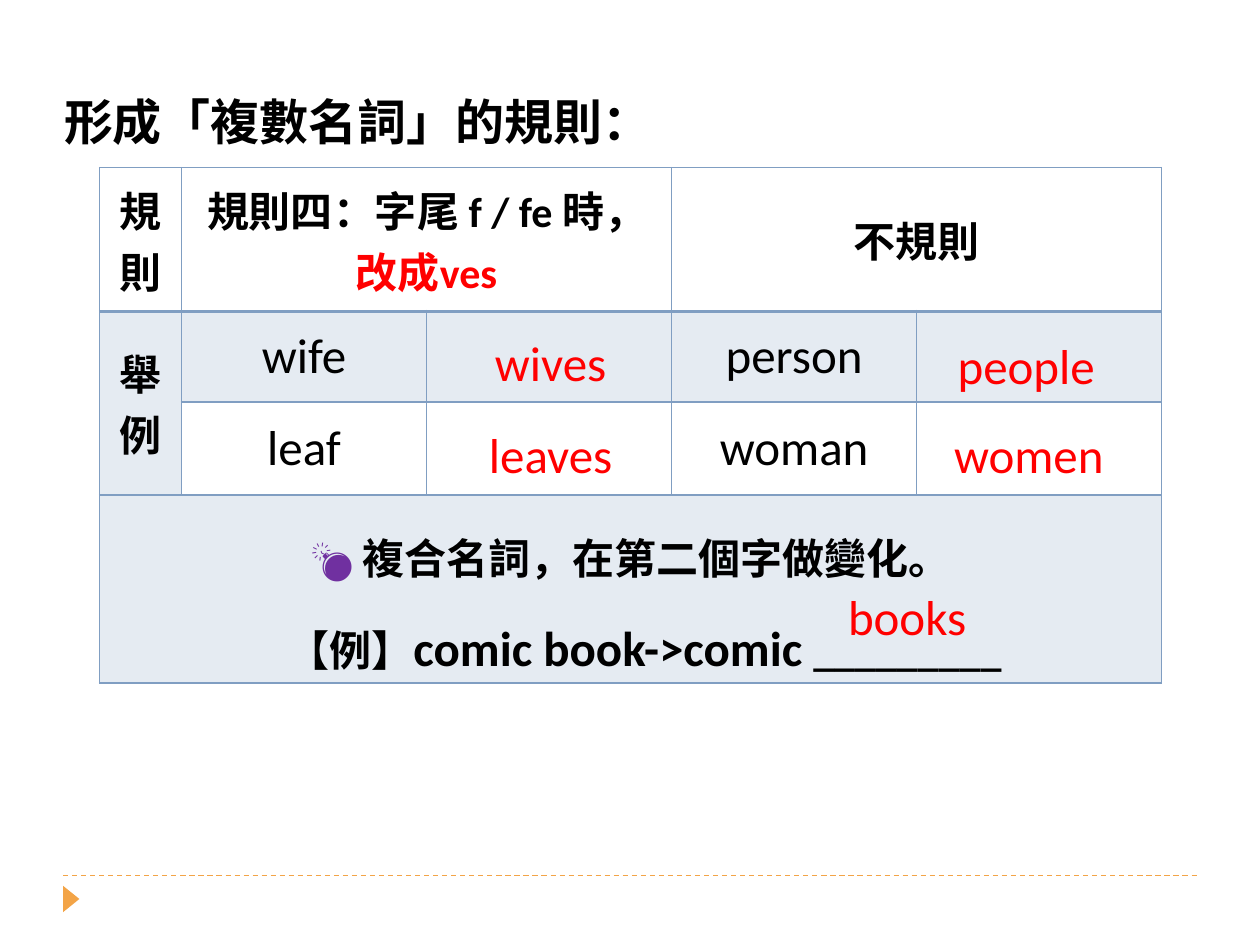
from lxml import etree
from pptx import Presentation
from pptx.dml.color import RGBColor
from pptx.enum.dml import MSO_LINE
from pptx.enum.shapes import MSO_CONNECTOR, MSO_SHAPE
from pptx.enum.text import MSO_ANCHOR, PP_ALIGN
from pptx.oxml.ns import qn
from pptx.util import Inches, Pt

DASH = MSO_LINE.DASH
STRAIGHT = MSO_CONNECTOR.STRAIGHT
TRIANGLE = MSO_SHAPE.ISOSCELES_TRIANGLE
MIDDLE, TOP = MSO_ANCHOR.MIDDLE, MSO_ANCHOR.TOP
CENTER = PP_ALIGN.CENTER
CJK = "Noto Sans CJK SC"
BLUE, ORANGE, RED, BLACK, PURPLE = "809EC2", "F3A447", "FF0000", "000000", "7030A0"


def rgb(value):
    return RGBColor.from_string(value)


def add_text(p, text, size=24, color=BLACK, bold=True, font="Calibri", align=CENTER):
    p.alignment = align
    r = p.add_run()
    r.text = text
    r.font.size = Pt(size)
    r.font.bold = bold
    r.font.name = font
    r.font.color.rgb = rgb(color)
    etree.SubElement(r._r.get_or_add_rPr(), qn("a:ea"), typeface=CJK)


prs = Presentation()
prs.slide_width, prs.slide_height = Inches(10), Inches(7.5)
s = prs.slides.add_slide(prs.slide_layouts[6])

footer_line = s.shapes.add_connector(STRAIGHT, Inches(0.5), Inches(6.95), Inches(9.5), Inches(6.95))
footer_line.line.color.rgb = rgb(ORANGE)
footer_line.line.width = Pt(0.75)
footer_line.line.dash_style = DASH
etree.SubElement(footer_line._element.spPr, qn("a:effectLst"))

marker = s.shapes.add_shape(TRIANGLE, Inches(0.46), Inches(7.07), Inches(0.21), Inches(0.13))
marker.rotation = 90
marker.shadow.inherit = False
marker.fill.solid()
marker.fill.fore_color.rgb = rgb(ORANGE)
marker.line.fill.background()

table = s.shapes.add_table(4, 5, Inches(0.79), Inches(1.33), Inches(8.43), Inches(4.09)).table
table.first_row = table.horz_banding = False
table.columns[0].width = Inches(0.65)
for col in range(1, 5):
    table.columns[col].width = Inches((8.43 - 0.65) / 4)
for row, height in enumerate([1.14, 0.72, 0.74, 1.49]):
    table.rows[row].height = Inches(height)

for row in range(4):
    for col in range(5):
        cell = table.cell(row, col)
        cell.margin_left = cell.margin_right = Inches(0.07)
        cell.margin_top = cell.margin_bottom = 0
        cell.vertical_anchor = TOP if row == 3 else MIDDLE
        tcPr = cell._tc.get_or_add_tcPr()
        for side in "LRTB":
            thick = (row, side) in [(0, "B"), (1, "T")]
            ln = etree.SubElement(tcPr, qn(f"a:ln{side}"), w=str(Pt(2 if thick else 1)))
            fill = etree.SubElement(ln, qn("a:solidFill"))
            etree.SubElement(fill, qn("a:srgbClr"), val=BLUE)
        if row in (1, 3) or (row, col) == (2, 0):
            cell.fill.solid()
            cell.fill.fore_color.rgb = rgb(BLUE)
            tint = tcPr.find(qn("a:solidFill")).find(qn("a:srgbClr"))
            etree.SubElement(tint, qn("a:alpha"), val="20000")
        else:
            cell.fill.background()

for first, last in [((0, 1), (0, 2)), ((0, 3), (0, 4)), ((1, 0), (2, 0)), ((3, 0), (3, 4))]:
    table.cell(*first).merge(table.cell(*last))

for row, col, text in [(0, 0, "規則"), (0, 1, "規則四：字尾 f / fe 時，"), (0, 3, "不規則"), (1, 0, "舉")]:
    add_text(table.cell(row, col).text_frame.paragraphs[0], text)
add_text(table.cell(0, 1).text_frame.paragraphs[0], "改成ves", color=RED)
add_text(table.cell(1, 0).text_frame.add_paragraph(), "例")

for row, col, word in [(1, 1, "wife"), (1, 3, "person"), (2, 1, "leaf"), (2, 3, "woman")]:
    add_text(table.cell(row, col).text_frame.paragraphs[0], word, size=28, bold=False)

tf = table.cell(3, 0).text_frame
p = tf.paragraphs[0]
p.line_spacing = 1.5
add_text(p, "💣 ", color=PURPLE)
add_text(p, "複合名詞，在第二個字做變化。")
p = tf.add_paragraph()
p.line_spacing = 1.5
p._p.get_or_add_pPr().set("marL", str(Inches(0.22)))
add_text(p, "【例】")
add_text(p, "comic book->comic ", size=28)
add_text(p, "_________")

answers = [
    ("wives", 3.74, 2.59, 1.26),
    ("leaves", 3.66, 3.32, 1.42),
    ("people", 7.36, 2.61, 1.57),
    ("women", 7.31, 3.32, 1.71),
    ("books", 6.57, 4.6, 1.26),
]
for word, left, top, width in answers:
    tf = s.shapes.add_textbox(Inches(left), Inches(top), Inches(width), Inches(0.57)).text_frame
    tf.word_wrap = True
    tf.vertical_anchor = MIDDLE
    add_text(tf.paragraphs[0], word, size=28, color=RED, bold=False)

tf = s.shapes.add_textbox(Inches(0.41), Inches(0.68), Inches(4.91), Inches(0.57)).text_frame
tf.word_wrap = False
add_text(tf.paragraphs[0], "形成「複數名詞」的規則：", size=28, font=CJK, align=PP_ALIGN.LEFT)

prs.save("out.pptx")
